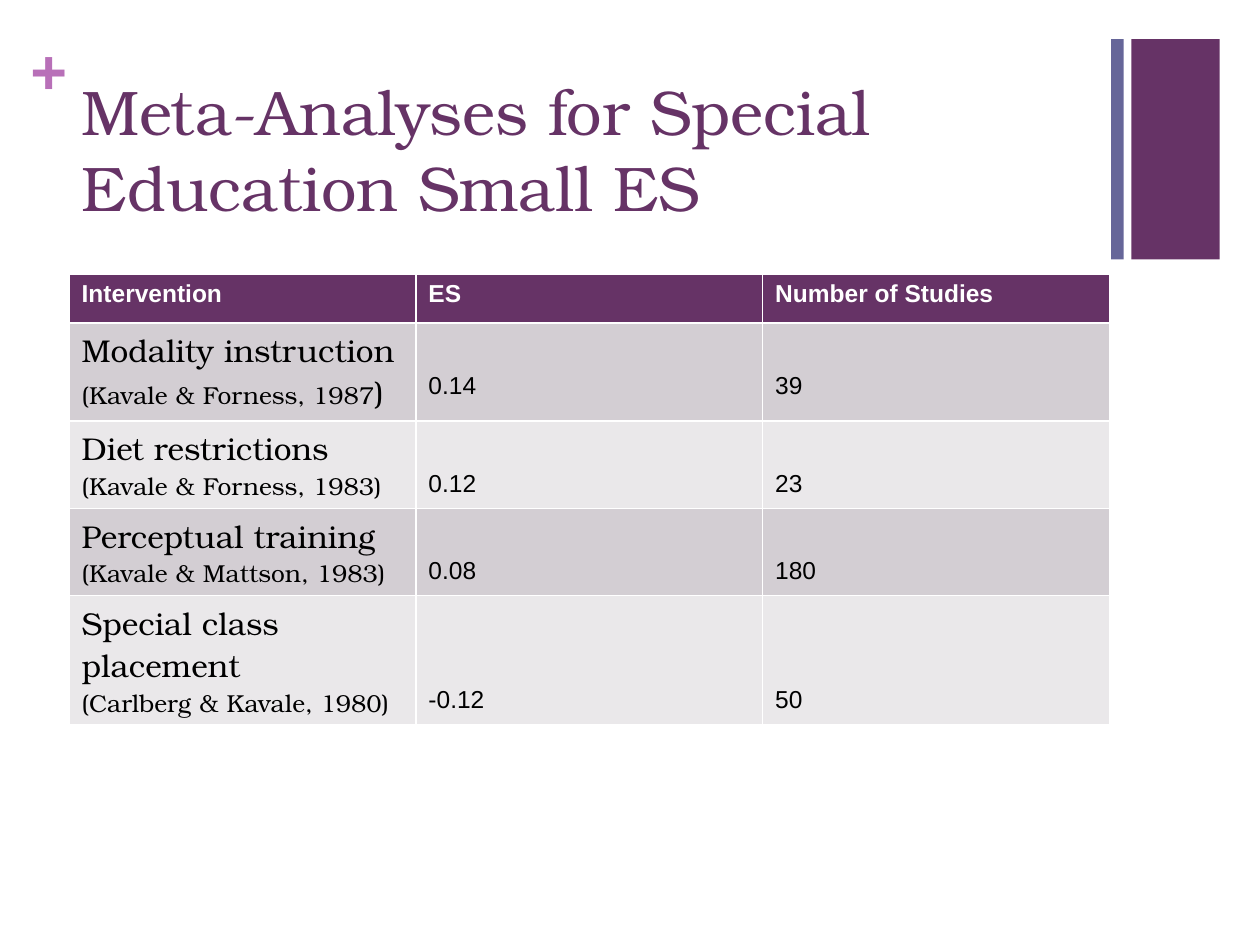
import pptx
import pptx.util
import pptx.dml.color
import pptx.enum.shapes
import pptx.enum.text

Pt = pptx.util.Pt
ANCHOR = pptx.enum.text.MSO_ANCHOR
SERIF, SANS = "TeX Gyre Bonum", "Arial"
PLUM, BLUE, PINK = "663366", "666699", "B870B8"
BANDS = ["D3CED3", "EAE8EA"]


def rgb(code):
    return pptx.dml.color.RGBColor.from_string(code)


class Deck:
    def __init__(self, wide, high):
        self.prs = pptx.Presentation()
        self.prs.slide_width, self.prs.slide_height = Pt(wide), Pt(high)
        self.slide = self.prs.slides.add_slide(self.prs.slide_layouts[5])

    def style(self, para, size, face, color, bold=False):
        font = para.font
        font.size, font.name, font.bold = Pt(size), face, bold
        font.color.rgb = rgb(color)

    def title(self, text, box):
        shape = self.slide.shapes.title
        shape.left, shape.top, shape.width, shape.height = map(Pt, box)
        frame = shape.text_frame
        frame.text = text
        frame.word_wrap = True
        frame.auto_size = pptx.enum.text.MSO_AUTO_SIZE.NONE
        frame.vertical_anchor = ANCHOR.TOP
        para = frame.paragraphs[0]
        para.alignment = pptx.enum.text.PP_ALIGN.LEFT
        self.style(para, 36, SERIF, PLUM)

    def bar(self, color, box):
        kind = pptx.enum.shapes.MSO_SHAPE.RECTANGLE
        shape = self.slide.shapes.add_shape(kind, *map(Pt, box))
        shape.shadow.inherit = False
        shape.fill.solid()
        shape.fill.fore_color.rgb = rgb(color)
        shape.line.fill.background()

    def mark(self, text, box):
        frame = self.slide.shapes.add_textbox(*map(Pt, box)).text_frame
        frame.margin_left = frame.margin_right = 0
        frame.margin_top = frame.margin_bottom = 0
        frame.word_wrap = True
        frame.text = text
        self.style(frame.paragraphs[0], 36, SANS, PINK, True)

    def cell(self, cell, text, fill):
        cell.fill.solid()
        cell.fill.fore_color.rgb = rgb(fill)
        cell.text_frame.text = text
        return cell.text_frame.paragraphs

    def table(self, heads, rows, highs, box):
        grid = self.slide.shapes.add_table(
            len(rows) + 1, len(heads), *map(Pt, box)).table
        for row, high in zip(grid.rows, highs):
            row.height = Pt(high)

        # Header row
        for col, head in enumerate(heads):
            paras = self.cell(grid.cell(0, col), head, PLUM)
            self.style(paras[0], 14, SANS, "FFFFFF", True)

        # Body rows: name over source, then values set low in the cell
        for num, (name, source, *vals) in enumerate(rows, 1):
            fill = BANDS[(num - 1) % 2]
            paras = self.cell(grid.cell(num, 0), name + "\n" + source, fill)
            for para, size in zip(paras, (18, 14)):
                self.style(para, size, SERIF, "000000")
            if num == 1:  # larger closing bracket
                paras[1].runs[0].text = source[:-1]
                end = paras[1].add_run()
                end.text = source[-1]
                end.font.size = Pt(18)
            for col, val in enumerate(vals, 1):
                cell = grid.cell(num, col)
                self.style(self.cell(cell, val, fill)[0], 14, SANS, "000000")
                cell.vertical_anchor = ANCHOR.BOTTOM
                cell.margin_bottom = Pt(12 if num == 1 else 6)


def main():
    deck = Deck(720, 540)

    # Corner decoration
    deck.bar(PLUM, (646.5, 22.3, 50.5, 126))
    deck.mark("+", (17.3, 18, 21, 44))
    deck.bar(BLUE, (635, 22.3, 7.2, 126))

    # Title and table
    deck.title("Meta-Analyses for Special Education Small ES",
               (39.5, 38, 594.5, 88))
    heads = ["Intervention", "ES", "Number of Studies"]
    rows = [
        ("Modality instruction", "(Kavale & Forness, 1987)", "0.14", "39"),
        ("Diet restrictions", "(Kavale & Forness, 1983)", "0.12", "23"),
        ("Perceptual training", "(Kavale & Mattson, 1983)", "0.08", "180"),
        ("Special class placement", "(Carlberg & Kavale, 1980)",
         "-0.12", "50"),
    ]
    highs = [28, 56, 50, 50, 73.5]
    deck.table(heads, rows, highs, (39.5, 156.5, 594.5, sum(highs)))

    deck.prs.save("out.pptx")


if __name__ == "__main__":
    main()
